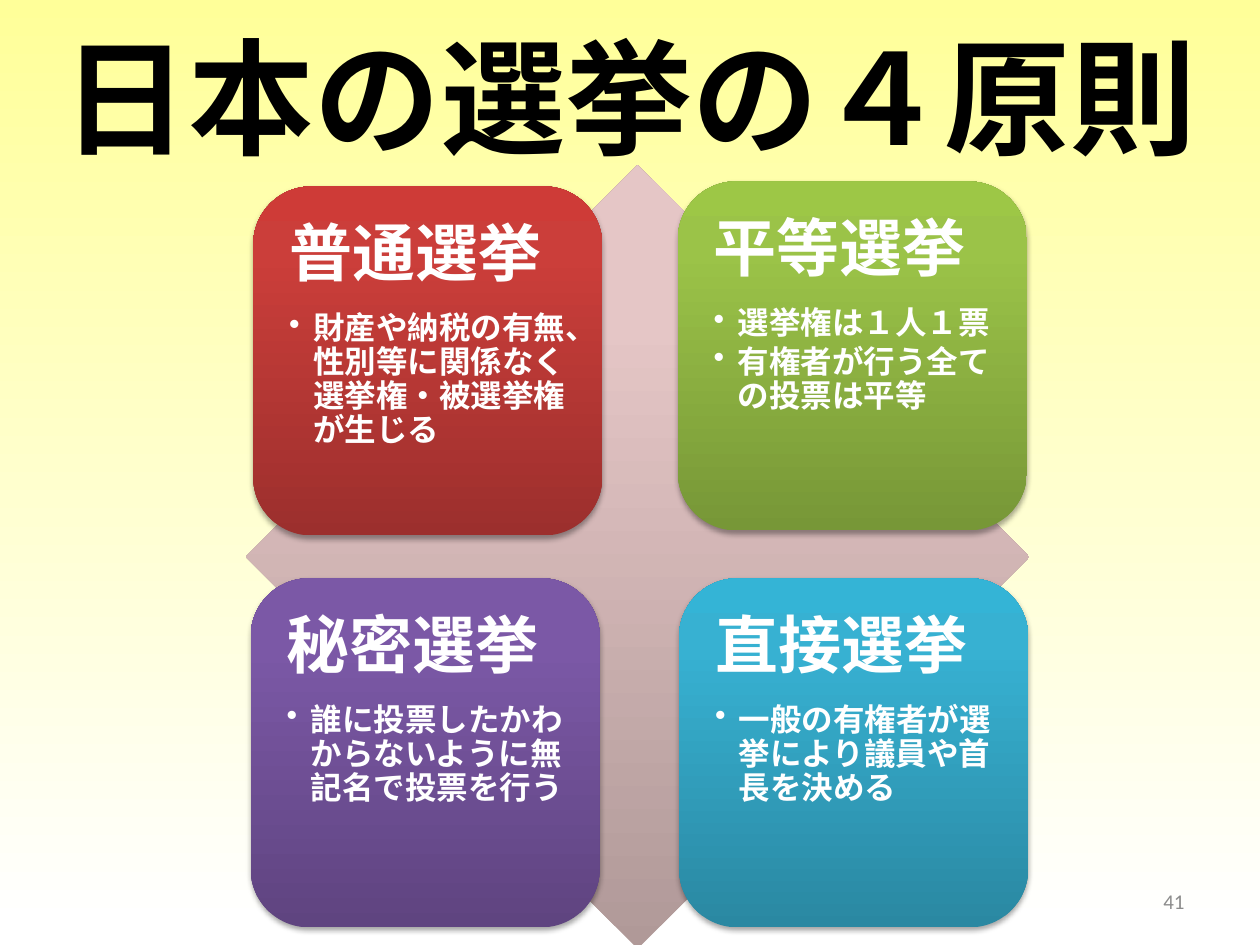
"""Build a slide on the four principles of Japanese elections."""
from copy import deepcopy

from pptx import Presentation
from pptx.dml.color import RGBColor
from pptx.enum.shapes import MSO_SHAPE as SHAPE
from pptx.enum.text import MSO_ANCHOR as ANCHOR, PP_ALIGN as ALIGN
from pptx.oxml import parse_xml
from pptx.oxml.ns import nsdecls, qn
from pptx.util import Inches, Pt

JP = "Noto Sans CJK JP"
SHADOW = (f'<a:outerShdw {nsdecls("a")} blurRad="40000" dist="23000" dir="5400000" rotWithShape="0">'
          '<a:srgbClr val="000000"><a:alpha val="35000"/></a:srgbClr></a:outerShdw>')


def set_gradient(fill, root, angle, stops):
    fill.gradient()
    fill.gradient_angle = angle
    gs_list = root.find(".//" + qn("a:gsLst"))
    while len(gs_list) < len(stops):
        gs_list.append(deepcopy(gs_list[0]))
    for stop, (position, color) in zip(fill.gradient_stops, stops):
        stop.position = position
        stop.color.rgb = RGBColor.from_string(color)


def add_run(p, text, size, color, name=JP, bold=True):
    r = p.add_run()
    r.text = text
    r.font.size, r.font.bold, r.font.name = Pt(size), bold, name
    r.font.color.rgb = RGBColor.from_string(color)
    r.font._element.append(parse_xml(f'<a:ea {nsdecls("a")} typeface="{name}"/>'))


prs = Presentation()
prs.slide_width, prs.slide_height = Inches(10), Inches(7.5)
s = prs.slides.add_slide(prs.slide_layouts[5])
set_gradient(s.background.fill, s._element, 270, [(0, "FFFF99"), (0.98, "FFFFFF")])

title = s.shapes.title
title.left, title.top, title.width, title.height = [Inches(v) for v in (0.31, 0.13, 9.38, 1.25)]
tf = title.text_frame
tf.vertical_anchor = ANCHOR.MIDDLE
tf.paragraphs[0].alignment = ALIGN.CENTER
add_run(tf.paragraphs[0], "日本の選挙の４原則", 72, "000000")

diamond = s.shapes.add_shape(SHAPE.DIAMOND, Inches(1.95), Inches(1.31), Inches(6.22), Inches(6.22))
diamond.shadow.inherit = False
diamond.line.fill.background()
set_gradient(diamond.fill, diamond._element, 90, [(0, "B09998"), (0.8, "E5C6C6"), (1, "E6C7C6")])

cards = [
    (2.01, 1.48, ("9C2F2D", "CB3E3A", "CE3B37"), "普通選挙",
     ["財産や納税の有無、性別等に関係なく選挙権・被選挙権が生じる"]),
    (5.38, 1.44, ("779737", "9BC348", "9DC746"), "平等選挙",
     ["選挙権は１人１票", "有権者が行う全ての投票は平等"]),
    (1.99, 4.59, ("5F4480", "7B58A6", "7C57A8"), "秘密選挙",
     ["誰に投票したかわからないように無記名で投票を行う"]),
    (5.39, 4.59, ("2A88A2", "37B1D2", "34B4D6"), "直接選挙",
     ["一般の有権者が選挙により議員や首長を決める"]),
]
for left, top, colors, heading, points in cards:
    sp = s.shapes.add_shape(SHAPE.ROUNDED_RECTANGLE, Inches(left), Inches(top), Inches(2.77), Inches(2.77))
    sp.line.fill.background()
    set_gradient(sp.fill, sp._element, 90, list(zip((0, 0.8, 1), colors)))
    sp.shadow.inherit = False
    sp._element.spPr.find(qn("a:effectLst")).append(parse_xml(SHADOW))
    tf = sp.text_frame
    tf.word_wrap = True
    tf.vertical_anchor = ANCHOR.TOP
    tf.margin_left = tf.margin_right = tf.margin_top = tf.margin_bottom = Inches(0.15)
    p = tf.paragraphs[0]
    p.alignment, p.line_spacing, p.space_after = ALIGN.LEFT, 0.9, Pt(12.6)
    add_run(p, heading, 36, "FFFFFF")
    for point in points:
        p = tf.add_paragraph()
        p.level = 1
        p.alignment, p.line_spacing, p.space_after = ALIGN.LEFT, 0.9, Pt(2.7)
        pPr = p._p.get_or_add_pPr()
        pPr.set("marL", str(Inches(0.19)))
        pPr.set("indent", str(-Inches(0.19)))
        pPr.append(parse_xml(f'<a:buChar {nsdecls("a")} char="•"/>'))
        add_run(p, point, 18, "FFFFFF")

number = s.shapes.add_textbox(Inches(7.17), Inches(6.95), Inches(2.33), Inches(0.4))
tf = number.text_frame
tf.word_wrap = True
tf.vertical_anchor = ANCHOR.MIDDLE
tf.paragraphs[0].alignment = ALIGN.RIGHT
add_run(tf.paragraphs[0], "41", 12, "8C8C8C", "Calibri", False)

prs.save("out.pptx")
